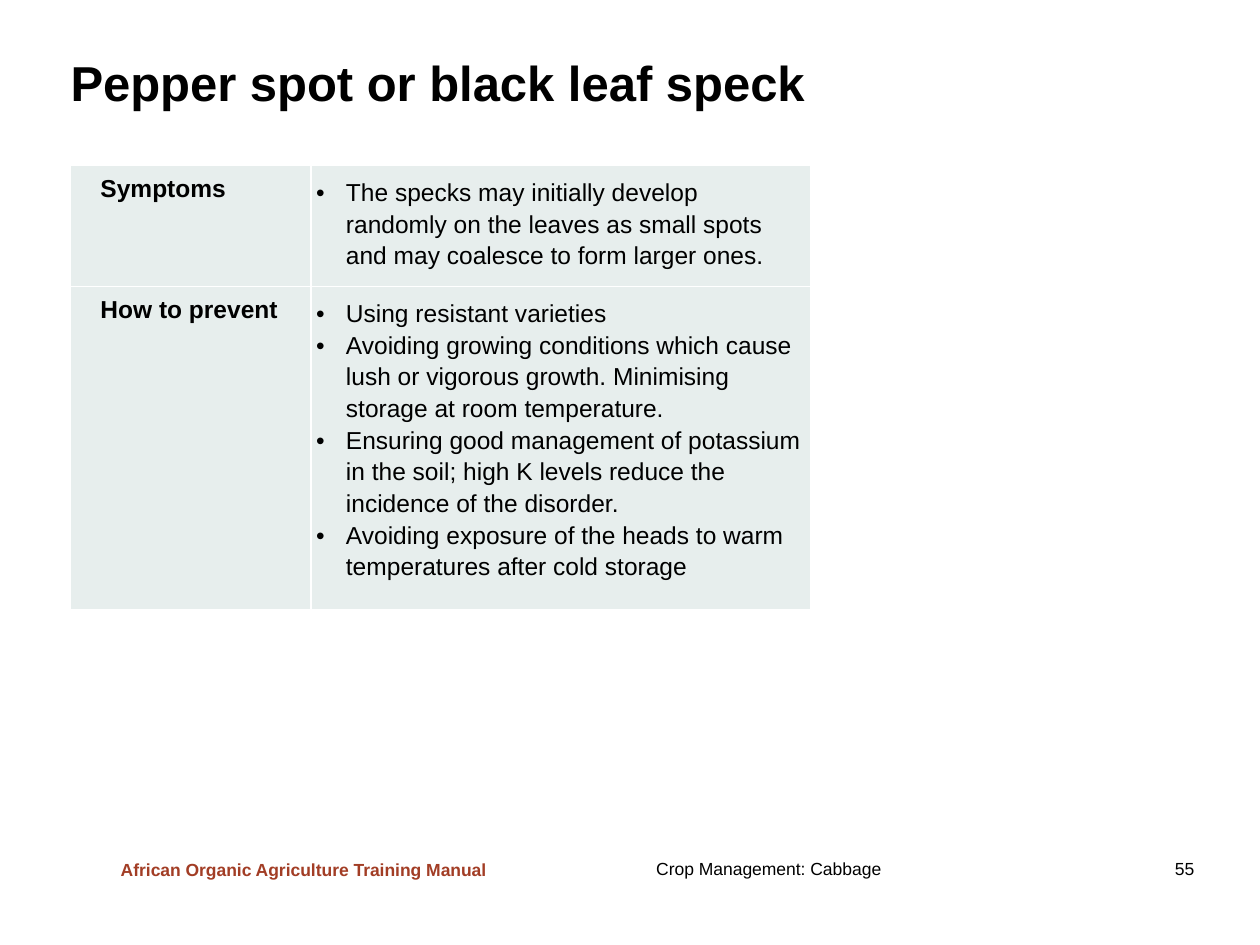
from dataclasses import dataclass
from typing import Optional

from lxml.etree import SubElement
from pptx import Presentation
from pptx.dml.color import RGBColor
from pptx.enum.text import MSO_ANCHOR, MSO_AUTO_SIZE, PP_ALIGN
from pptx.oxml import parse_xml
from pptx.oxml.ns import nsdecls, qn
from pptx.util import Pt

BLACK = RGBColor(0x00, 0x00, 0x00)
WHITE = RGBColor(0xFF, 0xFF, 0xFF)
RUST = RGBColor(0xA2, 0x3D, 0x25)
PALE_GREEN = RGBColor(0xE7, 0xEE, 0xED)
FONT = "Arial"
LEFT_EDGE = 40.3


@dataclass
class Topic:
    heading: str
    points: list[str]
    height: float


TOPICS = [
    Topic("Symptoms", [
        "The specks may initially develop randomly on the leaves as small spots "
        "and may coalesce to form larger ones.",
    ], 64.8),
    Topic("How to prevent", [
        "Using resistant varieties",
        "Avoiding growing conditions which cause lush or vigorous growth. "
        "Minimising storage at room temperature.",
        "Ensuring good management of potassium in the soil; high K levels reduce "
        "the incidence of the disorder.",
        "Avoiding exposure of the heads to warm temperatures after cold storage",
    ], 174),
]
COLUMN_WIDTHS = [137.5, 285.5]


def write(frame, texts: list[str], *, size: float, bold: bool = False,
          color: RGBColor = BLACK, indent: float = 0, bullet: Optional[str] = None,
          line_spacing: Optional[float] = None, space_after: float = 0,
          right_tab: Optional[float] = None) -> None:
    """Fill a text frame with one paragraph per text, all in the same format."""
    for index, text in enumerate(texts):
        para = frame.paragraphs[0] if index == 0 else frame.add_paragraph()
        properties = para._p.get_or_add_pPr()
        if indent:
            properties.set("marL", str(Pt(indent)))
        if bullet:
            properties.set("indent", str(-Pt(indent)))
            SubElement(properties, qn("a:buFont"), typeface=FONT)
            SubElement(properties, qn("a:buChar"), char=bullet)
        if right_tab:
            stops = SubElement(properties, qn("a:tabLst"))
            SubElement(stops, qn("a:tab"), pos=str(Pt(right_tab)), algn="r")
        para.alignment = PP_ALIGN.LEFT
        para.space_after = Pt(space_after)
        if line_spacing:
            para.line_spacing = line_spacing
        span = para.add_run()
        span.text = text
        span.font.name = FONT
        span.font.size = Pt(size)
        span.font.bold = bold
        span.font.color.rgb = color


def add_footer(page, text: str, left: float, top: float, width: float,
               wrap: bool, **style) -> None:
    box = page.shapes.add_textbox(Pt(left), Pt(top), Pt(width), Pt(19.4))
    box.text_frame.word_wrap = wrap
    write(box.text_frame, [text], size=10, **style)


def format_cell(cell) -> None:
    cell.margin_left = cell.margin_right = Pt(2.9)
    cell.margin_top = cell.margin_bottom = Pt(5.6)
    cell.vertical_anchor = MSO_ANCHOR.TOP
    cell.fill.solid()
    cell.fill.fore_color.rgb = PALE_GREEN
    # Borders come before the fill in the cell properties
    for position, side in enumerate(("lnL", "lnR", "lnT", "lnB")):
        border = parse_xml(
            f'<a:{side} {nsdecls("a")} w="{Pt(1)}"><a:solidFill>'
            f'<a:srgbClr val="{WHITE}"/></a:solidFill></a:{side}>')
        cell._tc.get_or_add_tcPr().insert(position, border)


def add_topic_table(page, topics: list[Topic]) -> None:
    frame = page.shapes.add_table(
        len(topics), len(COLUMN_WIDTHS), Pt(LEFT_EDGE), Pt(94.6),
        Pt(sum(COLUMN_WIDTHS)), Pt(sum(topic.height for topic in topics)))
    table = frame.table
    table.first_row = table.horz_banding = False
    for column, width in zip(table.columns, COLUMN_WIDTHS):
        column.width = Pt(width)
    for row, topic in zip(table.rows, topics):
        row.height = Pt(topic.height)
        heading_cell, points_cell = row.cells
        format_cell(heading_cell)
        format_cell(points_cell)
        write(heading_cell.text_frame, [topic.heading], size=14, bold=True,
              indent=14.2, space_after=3)
        write(points_cell.text_frame, topic.points, size=14, indent=17,
              bullet="•", line_spacing=1.15)


def main() -> None:
    deck = Presentation()
    deck.slide_width, deck.slide_height = Pt(720), Pt(540)
    page = deck.slides.add_slide(deck.slide_layouts[5])

    # Footer
    add_footer(page, "Crop Management: Cabbage\t55", 367.9, 487, 346.3, True,
               right_tab=307.5)
    add_footer(page, "African Organic Agriculture Training Manual", 61.9, 487.4,
               226, False, bold=True, color=RUST)

    # Title
    title = page.shapes.title
    title.left, title.top = Pt(LEFT_EDGE), Pt(25.9)
    title.width, title.height = Pt(649.4), Pt(45.4)
    frame = title.text_frame
    frame.auto_size = MSO_AUTO_SIZE.NONE
    frame.vertical_anchor = MSO_ANCHOR.MIDDLE
    frame.margin_left = frame.margin_top = Pt(0)
    frame.margin_right, frame.margin_bottom = Pt(7.2), Pt(3.6)
    write(frame, ["Pepper spot or black leaf speck"], size=28, bold=True)

    # Symptoms and prevention
    add_topic_table(page, TOPICS)
    deck.save("out.pptx")


if __name__ == "__main__":
    main()
